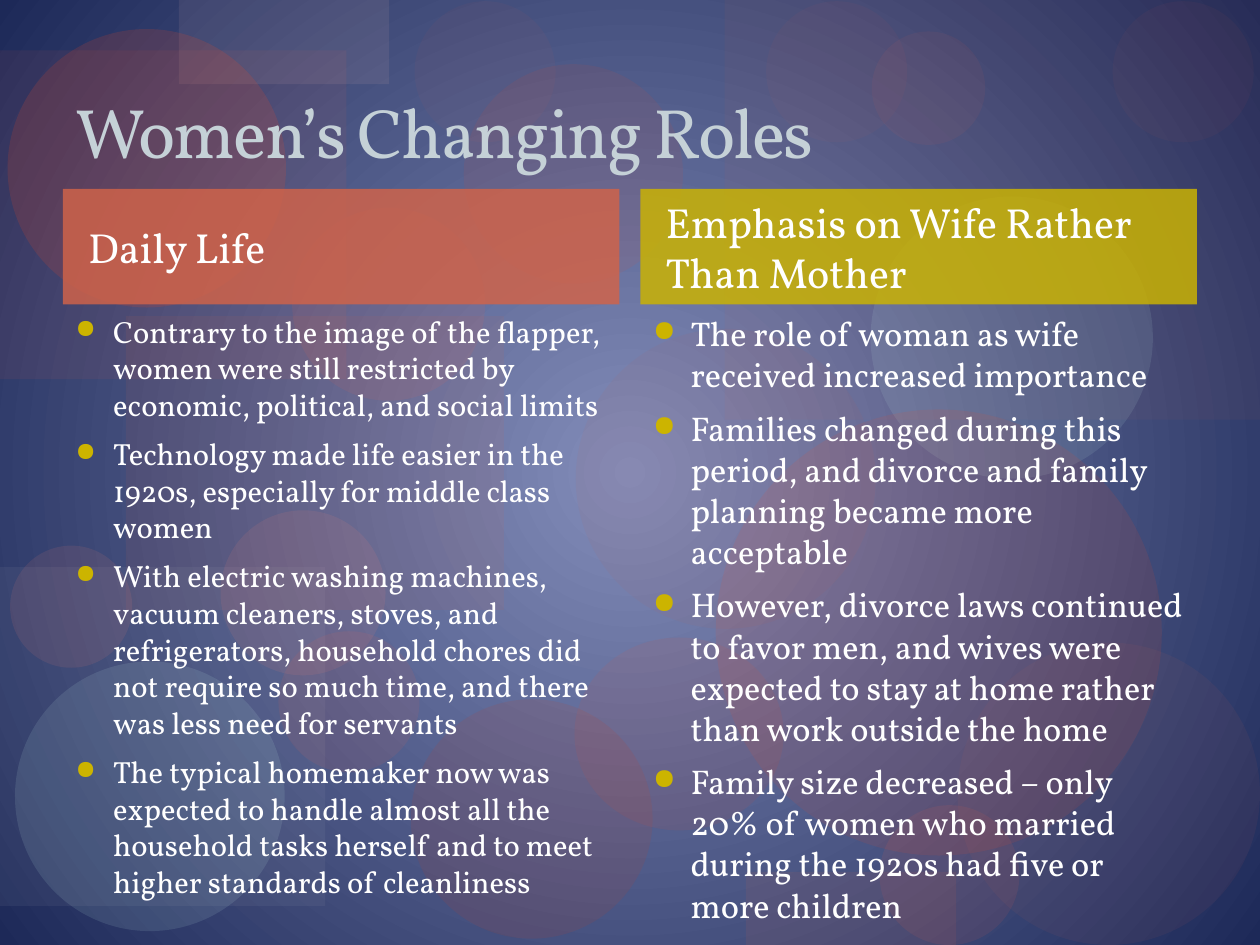
from lxml import etree
from pptx import Presentation
from pptx.dml.color import RGBColor
from pptx.enum import shapes, text
from pptx.oxml import ns
from pptx.util import Pt

FONT = "Vollkorn"
WHITE, GOLD, CORAL, TITLE_GREY = "FFFFFF", "CCB400", "D16349", "C5D1D7"
RECT, OVAL = shapes.MSO_SHAPE.RECTANGLE, shapes.MSO_SHAPE.OVAL

# shape, left, top, width, height, colour, opacity in percent; back to front
BACKDROP = [
    (RECT, 72, 180.7, 216, 167.8, CORAL, 9),
    (OVAL, 234.7, 399.6, 138.2, 136.8, "BB412B", 13),
    (RECT, 414, 0, 306, 239.8, CORAL, 6),
    (RECT, 0, 324, 185.8, 193.7, "B8BAC3", 8),
    (OVAL, 329, 187.9, 171.4, 171.4, "BF6154", 8),
    (OVAL, 502.6, 460.1, 79.9, 79.9, "FF6347", 9),
    (OVAL, 497.5, 112.3, 161.3, 161.3, "C1E8E4", 11),
    (OVAL, 8.6, 378, 154.1, 154.1, "C1E8E4", 12),
    (OVAL, 159.1, 360.7, 80.6, 80.6, "FF6347", 9),
    (OVAL, 328.3, 364.3, 119.5, 110.2, "FF471B", 8),
    (RECT, 0, 28.8, 198, 187.9, "FF6347", 7),
    (RECT, 102.2, 0, 120.2, 48.2, "E5B7B1", 10),
    (OVAL, 4.3, 16.6, 159.1, 159.1, "FF471B", 15),
    (OVAL, 5.8, 311.8, 69.8, 69.8, "FF8674", 10),
    (OVAL, 167, 118.8, 110.2, 110.2, "FF6347", 9),
    (OVAL, 265, 36.7, 125.3, 125.3, "FF471B", 8),
    (OVAL, 409, 234, 254.9, 254.9, "FF471B", 10),
    (OVAL, 437.8, 0.7, 80.6, 80.6, "FF6347", 4),
    (OVAL, 547.2, 367.2, 172.8, 172.8, "BF6154", 8),
    (OVAL, 126, 291.6, 94.3, 94.3, "FF8674", 10),
    (OVAL, 498.2, 18, 64.8, 64.8, "FF6347", 6),
    (OVAL, 635.8, 0.7, 80.6, 80.6, "FF6347", 4),
    (RECT, 426.2, 498.2, 120.2, 41.8, CORAL, 10),
    (OVAL, 236.9, 0.7, 80.6, 80.6, "FF6347", 4),
]

# left, heading colour, heading, body size, bullets
COLUMNS = [
    (36, CORAL, "Daily Life", 17.5, [
        "Contrary to the image of the flapper, women were still restricted by "
        "economic, political, and social limits",
        "Technology made life easier in the 1920s, especially for middle class women",
        "With electric washing machines, vacuum cleaners, stoves, and refrigerators, "
        "household chores did not require so much time, and there was less need for "
        "servants",
        "The typical homemaker now was expected to handle almost all the household "
        "tasks herself and to meet higher standards of cleanliness",
    ]),
    (366, GOLD, "Emphasis on Wife Rather Than Mother", 19.6, [
        "The role of woman as wife received increased importance",
        "Families changed during this period, and divorce and family planning became "
        "more acceptable",
        "However, divorce laws continued to favor men, and wives were expected to stay "
        "at home rather than work outside the home",
        "Family size decreased – only 20% of women who married during the 1920s had "
        "five or more children",
    ]),
]
COLUMN_WIDTH = 318


def rgb(value):
    return RGBColor.from_string(value)


def add_xml(parent, tag, **attrs):
    return etree.SubElement(parent, ns.qn(tag), attrs)


def set_all(obj, values):
    for name, value in values.items():
        setattr(obj, name, value)


def set_background(s, centre, edge):
    """Fill the slide with a gradient that spreads from its middle."""
    fill = s.background.fill
    fill.gradient()
    for stop, position, color in zip(fill.gradient_stops, (0, 1), (centre, edge)):
        stop.position = position
        stop.color.rgb = rgb(color)
    grad = next(s.element.iter(ns.qn("a:gradFill")))
    grad.remove(grad.find(ns.qn("a:lin")))
    radial = add_xml(grad, "a:path", path="circle")
    add_xml(radial, "a:fillToRect", l="50000", t="50000", r="50000", b="50000")


def add_tinted(s, kind, left, top, width, height, color, opacity):
    sp = s.shapes.add_shape(kind, Pt(left), Pt(top), Pt(width), Pt(height))
    sp.shadow.inherit = False
    sp.line.fill.background()
    sp.fill.solid()
    sp.fill.fore_color.rgb = rgb(color)
    clr = sp.element.spPr.find(ns.qn("a:solidFill"))[0]
    add_xml(clr, "a:alpha", val=str(opacity * 1000))
    return sp


def add_box(s, left, top, width, height, anchor):
    tf = s.shapes.add_textbox(Pt(left), Pt(top), Pt(width), Pt(height)).text_frame
    set_all(tf, {"word_wrap": True, "vertical_anchor": anchor})
    return tf


def write(p, words, size, color=WHITE):
    p.alignment = text.PP_ALIGN.LEFT
    r = p.add_run()
    r.text = words
    set_all(r.font, {"name": FONT, "size": Pt(size)})
    r.font.color.rgb = rgb(color)
    return r


def add_bullet(p):
    p.space_before = Pt(7)
    pPr = p._p.get_or_add_pPr()
    pPr.set("marL", str(Pt(21.6)))
    pPr.set("indent", str(-Pt(21.6)))
    add_xml(add_xml(pPr, "a:buClr"), "a:srgbClr", val=GOLD)
    add_xml(pPr, "a:buSzPct", val="85000")
    add_xml(pPr, "a:buChar", char="●")


def add_heading(s, left, color, words):
    tf = add_tinted(s, RECT, left, 108, COLUMN_WIDTH, 66, color, 83).text_frame
    set_all(tf, {
        "word_wrap": True, "vertical_anchor": text.MSO_ANCHOR.MIDDLE,
        "margin_left": Pt(14.4), "margin_right": Pt(7.2),
        "margin_top": Pt(7.2), "margin_bottom": Pt(7.2),
    })
    write(tf.paragraphs[0], words, 24)


def add_bullets(s, left, size, items):
    tf = add_box(s, left, 175, COLUMN_WIDTH, 308, text.MSO_ANCHOR.TOP)
    for i, item in enumerate(items):
        p = tf.add_paragraph() if i else tf.paragraphs[0]
        write(p, item, size)
        add_bullet(p)


def add_title(s, words):
    tf = add_box(s, 36, 12.2, 648, 90, text.MSO_ANCHOR.BOTTOM)
    r = write(tf.paragraphs[0], words, 40, TITLE_GREY)
    r._r.get_or_add_rPr().set("spc", "-100")


def main():
    prs = Presentation()
    set_all(prs, {"slide_width": Pt(720), "slide_height": Pt(540)})
    s = prs.slides.add_slide(prs.slide_layouts[6])
    set_background(s, "838DBA", "1D2958")
    for item in BACKDROP:
        add_tinted(s, *item)
    for left, color, heading, size, items in COLUMNS:
        add_heading(s, left, color, heading)
        add_bullets(s, left, size, items)
    add_title(s, "Women’s Changing Roles")
    prs.save("out.pptx")


if __name__ == "__main__":
    main()
